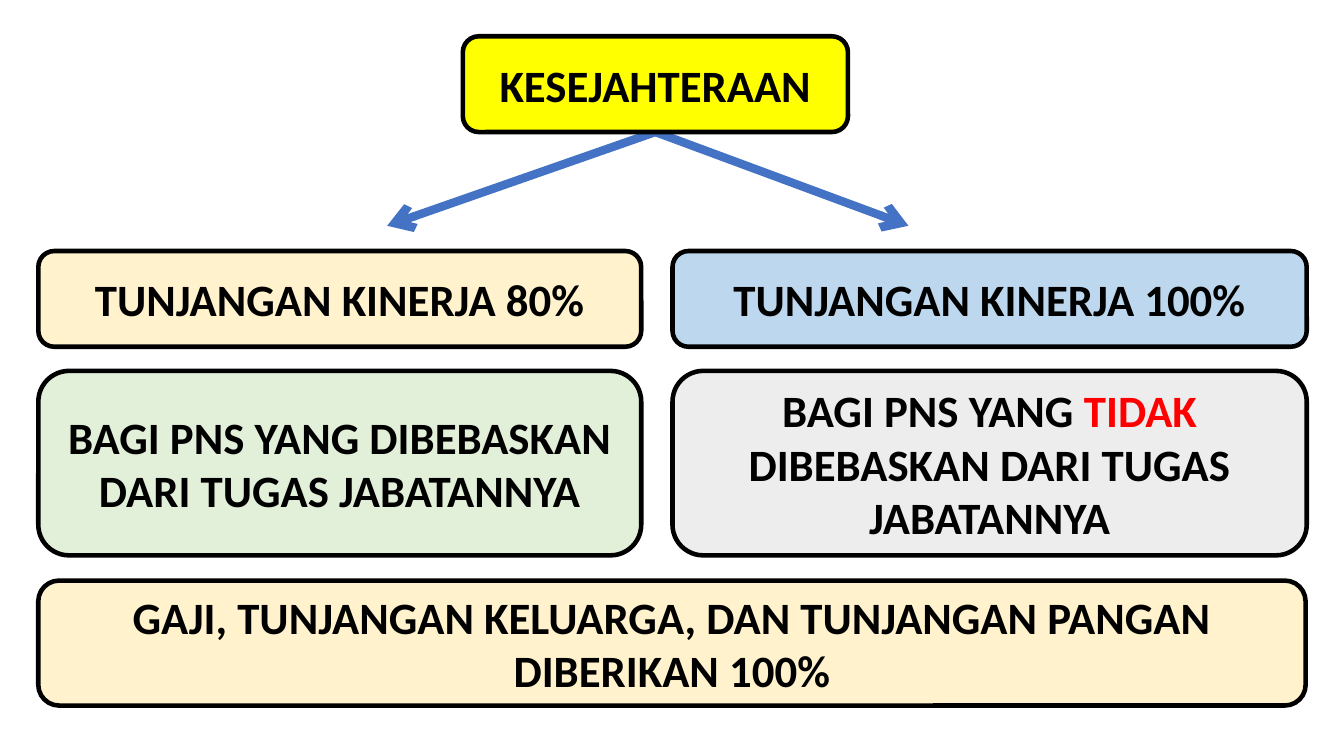
from pptx import Presentation
from pptx.dml.color import RGBColor
from pptx.enum.shapes import MSO_CONNECTOR as CONNECTOR, MSO_SHAPE as SHAPE
from pptx.enum.text import MSO_ANCHOR as ANCHOR, PP_ALIGN as ALIGN
from pptx.oxml.ns import qn
from pptx.util import Inches, Pt
from lxml.etree import SubElement

COLORS = {
    "black": "000000", "red": "FF0000", "arrow": "4472C4", "yellow": "FFFF00",
    "cream": "FFF2CC", "blue": "BDD7EE", "green": "E2F0D9", "gray": "EDEDED",
}
HEADING = [("KESEJAHTERAAN", "black")]
BRANCHES = [
    {
        "left": 0.38, "width": 5.98, "arrow_tip": 3.84,
        "boxes": [
            ("cream", [("TUNJANGAN KINERJA 80%", "black")]),
            ("green", [("BAGI PNS YANG DIBEBASKAN DARI TUGAS JABATANNYA", "black")]),
        ],
    },
    {
        "left": 6.67, "width": 6.29, "arrow_tip": 9.01,
        "boxes": [
            ("blue", [("TUNJANGAN KINERJA 100%", "black")]),
            ("gray", [
                ("BAGI PNS YANG ", "black"),
                ("TIDAK ", "red"),
                ("DIBEBASKAN DARI TUGAS JABATANNYA", "black"),
            ]),
        ],
    },
]
CONCLUSION = [("GAJI, TUNJANGAN KELUARGA, DAN TUNJANGAN PANGAN DIBERIKAN 100%", "black")]

FONT = {"name": "Calibri", "size": Pt(32), "bold": True}
HEADING_AREA = (4.59, 0.36, 3.82, 0.95)
ARROW_TIP_TOP = 2.24
BRANCH_ROWS = [(2.49, 0.95), (3.68, 1.83)]
CONCLUSION_AREA = (0.38, 5.76, 12.57, 1.24)


def rgb(name):
    return RGBColor.from_string(COLORS[name])


def add_box(slide, area, fill, text):
    box = slide.shapes.add_shape(SHAPE.ROUNDED_RECTANGLE, *map(Inches, area))
    box.shadow.inherit = False
    box.fill.solid()
    box.fill.fore_color.rgb = rgb(fill)
    box.line.color.rgb = rgb("black")
    box.line.width = Pt(3.25)
    frame = box.text_frame
    frame.word_wrap = True
    frame.vertical_anchor = ANCHOR.MIDDLE
    paragraph = frame.paragraphs[0]
    paragraph.alignment = ALIGN.CENTER
    for words, color in text:
        run = paragraph.add_run()
        run.text = words
        for key, value in FONT.items():
            setattr(run.font, key, value)
        run.font.color.rgb = rgb(color)
    return box


def add_arrow(slide, start, end):
    arrow = slide.shapes.add_connector(CONNECTOR.STRAIGHT, *map(Inches, start + end))
    arrow.line.color.rgb = rgb("arrow")
    arrow.line.width = Pt(6)
    SubElement(arrow.line._get_or_add_ln(), qn("a:tailEnd"), type="arrow")
    SubElement(arrow._element.spPr, qn("a:effectLst"))
    return arrow


def main():
    deck = Presentation()
    deck.slide_width, deck.slide_height = Inches(13.33), Inches(7.5)
    slide = deck.slides.add_slide(deck.slide_layouts[6])

    left, top, width, height = HEADING_AREA
    fork = (left + width / 2, top + height)
    arrows = [add_arrow(slide, fork, (branch["arrow_tip"], ARROW_TIP_TOP)) for branch in BRANCHES]
    heading = add_box(slide, HEADING_AREA, "yellow", HEADING)
    for arrow in arrows:
        arrow.begin_connect(heading, 2)

    for branch in BRANCHES:
        for (row_top, row_height), (fill, text) in zip(BRANCH_ROWS, branch["boxes"]):
            add_box(slide, (branch["left"], row_top, branch["width"], row_height), fill, text)

    add_box(slide, CONCLUSION_AREA, "cream", CONCLUSION)
    deck.save("out.pptx")


if __name__ == "__main__":
    main()
